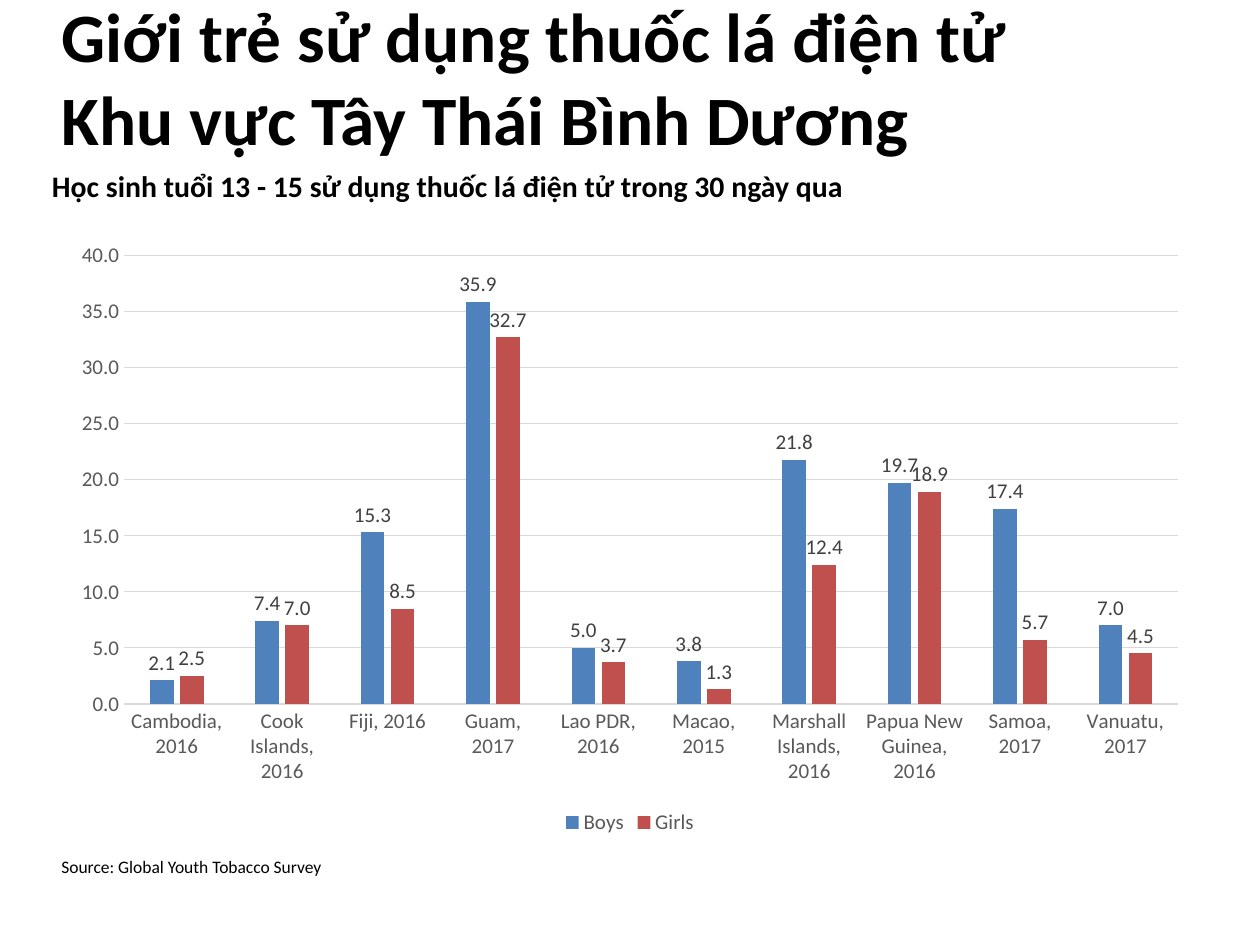
import pptx
import pptx.chart.data
import pptx.dml.color
import pptx.enum.chart
import pptx.enum.text
import pptx.util

EMU_PER_PX = 914400 / 126
FONT = "Calibri"
COLORS = {
    "text": "000000",
    "axis": "595959",
    "label": "404040",
    "grid": "D9D9D9",
    "boys": "4F81BD",
    "girls": "C0504D",
}
COUNTRIES = [
    "Cambodia, 2016", "Cook Islands, 2016", "Fiji, 2016", "Guam, 2017",
    "Lao PDR, 2016", "Macao, 2015", "Marshall Islands, 2016",
    "Papua New Guinea, 2016", "Samoa, 2017", "Vanuatu, 2017",
]
RATES = {
    "Boys": [2.1, 7.4, 15.3, 35.9, 5.0, 3.8, 21.8, 19.7, 17.4, 7.0],
    "Girls": [2.5, 7.0, 8.5, 32.7, 3.7, 1.3, 12.4, 18.9, 5.7, 4.5],
}


def px(length):
    return pptx.util.Emu(round(length * EMU_PER_PX))


def rgb(name):
    return pptx.dml.color.RGBColor.from_string(COLORS[name])


def style_font(font, size, color, bold=False):
    font.name = FONT
    font.size = pptx.util.Pt(size)
    font.bold = bold
    font.color.rgb = rgb(color)


def style_line(line, color):
    line.color.rgb = rgb(color)
    line.width = pptx.util.Pt(0.75)


def write_text(box, text, size, bold=False):
    """Fill a box with one left-aligned paragraph and return the paragraph."""
    frame = box.text_frame
    frame.word_wrap = True
    frame.auto_size = pptx.enum.text.MSO_AUTO_SIZE.NONE
    para = frame.paragraphs[0]
    para.alignment = pptx.enum.text.PP_ALIGN.LEFT
    span = para.add_run()
    span.text = text
    style_font(span.font, size, "text", bold)
    return para


def add_title(page, text):
    title = page.shapes.title
    title.left, title.top, title.width, title.height = map(px, (49, 26, 1075, 100))
    write_text(title, text, 39.6, bold=True)
    title.text_frame.vertical_anchor = pptx.enum.text.MSO_ANCHOR.MIDDLE


def add_subtitle(page, text):
    box = page.shapes.add_textbox(*map(px, (49, 164, 1211, 100)))
    frame = box.text_frame
    frame.margin_left = frame.margin_right = px(3)
    frame.margin_top = frame.margin_bottom = 0
    para = write_text(box, text, 17, bold=True)
    para.line_spacing = 1.1
    para.space_before = pptx.util.Pt(10)
    para.space_after = pptx.util.Pt(6)


def add_source(page, text):
    box = page.shapes.add_textbox(*map(px, (49, 850, 1160, 29)))
    para = write_text(box, text, 10)
    para.space_before = pptx.util.Pt(2)


def style_axes(chart):
    for axis in (chart.category_axis, chart.value_axis):
        axis.major_tick_mark = pptx.enum.chart.XL_TICK_MARK.NONE
        axis.minor_tick_mark = pptx.enum.chart.XL_TICK_MARK.NONE
        style_font(axis.tick_labels.font, 12, "axis")
    style_line(chart.category_axis.format.line, "grid")

    values = chart.value_axis
    values.minimum_scale, values.maximum_scale, values.major_unit = 0, 40, 5
    values.tick_labels.number_format = "0.0"
    values.tick_labels.number_format_is_linked = False
    values.format.line.fill.background()
    values.has_major_gridlines = True
    style_line(values.major_gridlines.format.line, "grid")


def style_series(series):
    series.format.fill.solid()
    series.format.fill.fore_color.rgb = rgb(series.name.lower())
    labels = series.data_labels
    labels.show_value = True
    labels.number_format = "0.0"
    labels.number_format_is_linked = False
    labels.position = pptx.enum.chart.XL_LABEL_POSITION.OUTSIDE_END
    style_font(labels.font, 12, "label")


def add_rate_chart(page):
    data = pptx.chart.data.CategoryChartData(number_format="0.0")
    data.categories = COUNTRIES
    for name, rates in RATES.items():
        data.add_series(name, rates)
    chart = page.shapes.add_chart(
        pptx.enum.chart.XL_CHART_TYPE.COLUMN_CLUSTERED,
        *map(px, (59, 231, 1142, 609)), data).chart
    chart.has_title = False
    style_font(chart.font, 10, "text")
    style_axes(chart)

    plot = chart.plots[0]
    plot.gap_width = 219
    plot.overlap = -27
    plot.vary_by_categories = False
    for series in plot.series:
        style_series(series)

    chart.has_legend = True
    chart.legend.position = pptx.enum.chart.XL_LEGEND_POSITION.BOTTOM
    chart.legend.include_in_layout = False
    style_font(chart.legend.font, 12, "axis")


def main():
    deck = pptx.Presentation()
    deck.slide_width, deck.slide_height = px(1260), px(945)
    page = deck.slides.add_slide(deck.slide_layouts.get_by_name("Title Only"))

    # Headings
    add_title(page, "Giới trẻ sử dụng thuốc lá điện tử Khu vực Tây Thái Bình Dương")
    add_subtitle(page, "Học sinh tuổi 13 - 15 sử dụng thuốc lá điện tử trong 30 ngày qua")

    # Use by country, with its source
    add_rate_chart(page)
    add_source(page, "Source: Global Youth Tobacco Survey")

    deck.save("out.pptx")


if __name__ == "__main__":
    main()
